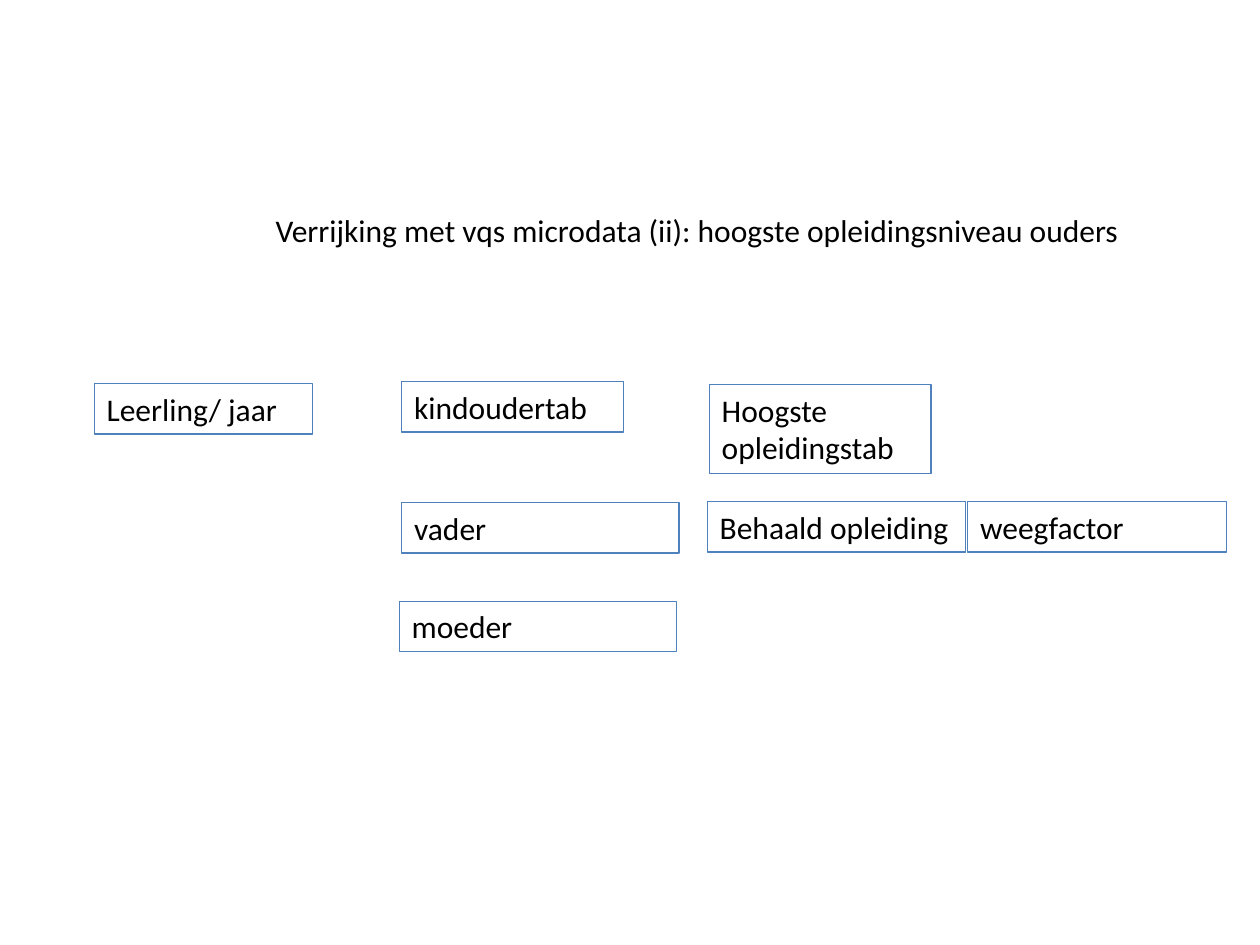
"""Build the slide on enriching pupil data with the parents' education level."""
import pptx
import pptx.dml.color
import pptx.enum.text
import pptx.util

Cm = pptx.util.Cm
Pt = pptx.util.Pt
BLACK = pptx.dml.color.RGBColor(0x00, 0x00, 0x00)
BLUE = pptx.dml.color.RGBColor(0x4F, 0x81, 0xBD)

TITLE = "Verrijking met vqs microdata (ii): hoogste opleidingsniveau ouders"
ROW = 1.02
BOXES = [
    ("Leerling/ jaar", 1.9, 7.73, 4.4, ROW),
    ("kindoudertab", 8.1, 7.69, 4.47, ROW),
    ("vader", 8.1, 10.13, 5.59, ROW),
    ("moeder", 8.05, 12.12, 5.59, ROW),
    ("Behaald opleiding", 14.26, 10.11, 5.21, ROW),
    ("weegfactor", 19.51, 10.11, 5.21, ROW),
    ("Hoogste opleidingstab", 14.3, 7.75, 4.47, 1.8),
]
FONT = {"name": "Calibri", "size": Pt(18)}
FRAME = {
    "auto_size": pptx.enum.text.MSO_AUTO_SIZE.SHAPE_TO_FIT_TEXT,
    "vertical_anchor": pptx.enum.text.MSO_ANCHOR.TOP,
}


def apply(item, vals):
    for key, val in vals.items():
        setattr(item, key, val)


def write(shape, text, wrap):
    frame = shape.text_frame
    frame.text = text
    apply(frame, {**FRAME, "word_wrap": wrap})
    para = frame.paragraphs[0]
    para.alignment = pptx.enum.text.PP_ALIGN.LEFT
    font = para.runs[0].font
    apply(font, FONT)
    font.color.rgb = BLACK


def main():
    deck = pptx.Presentation()
    apply(deck, {"slide_width": Cm(25.4), "slide_height": Cm(19.05)})
    slide = deck.slides.add_slide(deck.slide_layouts[5])

    title = slide.shapes.title
    apply(title, {"left": Cm(5.3), "top": Cm(4.12),
                  "width": Cm(17.73), "height": Cm(ROW)})
    write(title, TITLE, False)

    for text, *place in BOXES:
        box = slide.shapes.add_textbox(*map(Cm, place))
        box.line.color.rgb = BLUE
        box.line.width = Pt(0.75)
        write(box, text, True)

    deck.save("out.pptx")


if __name__ == "__main__":
    main()
